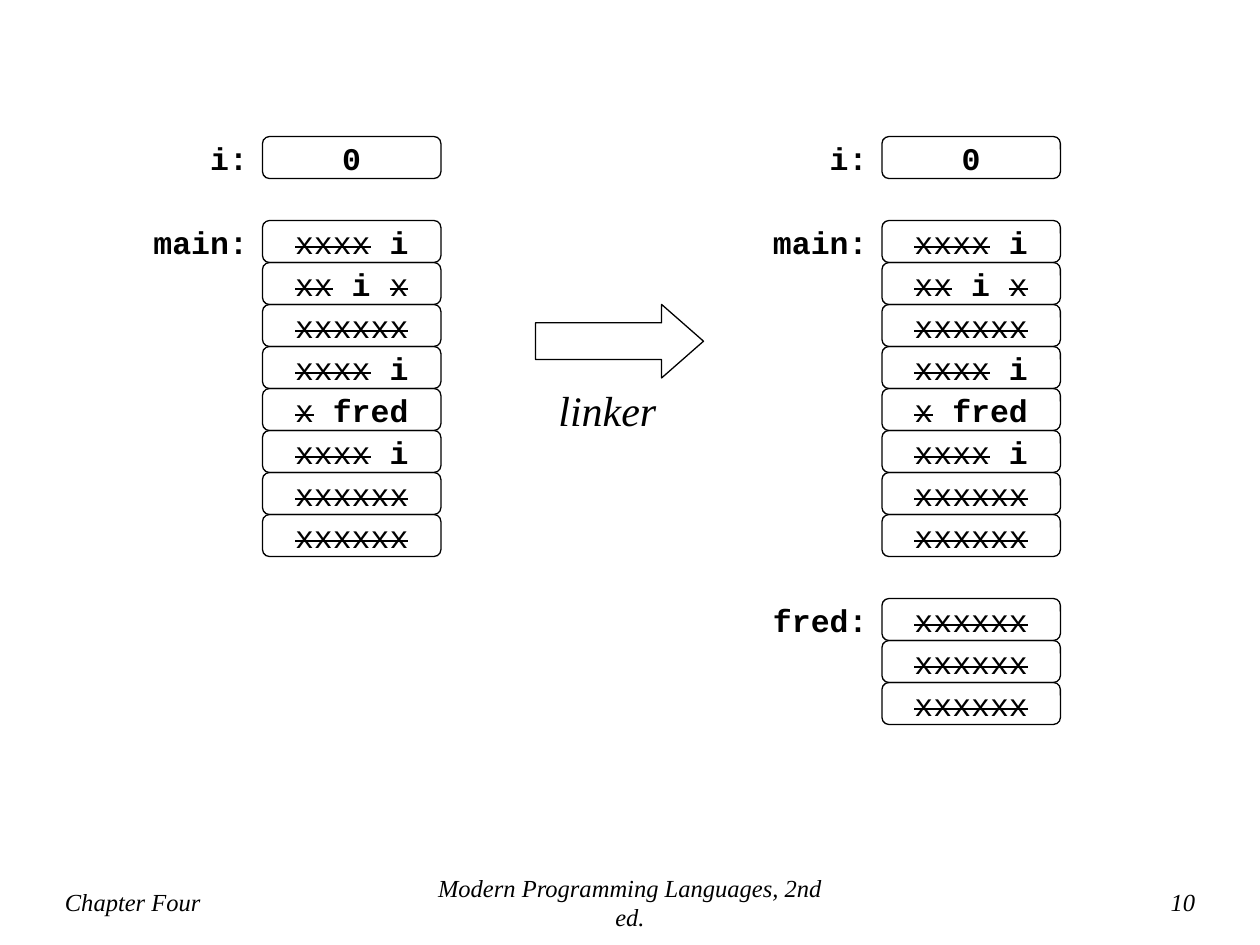
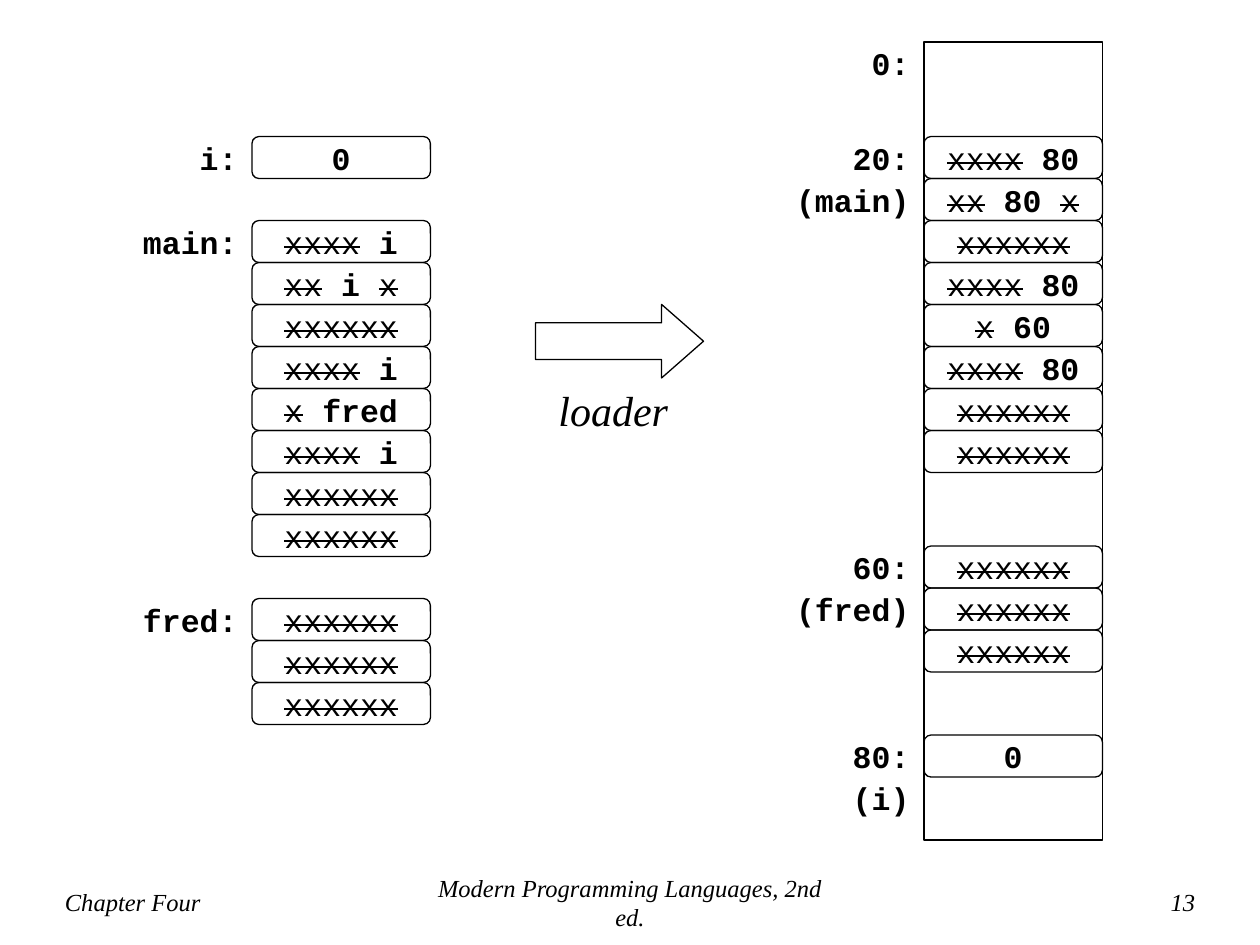
from dataclasses import dataclass
from itertools import groupby

from pptx import Presentation
from pptx.dml.color import RGBColor as Rgb
from pptx.enum.shapes import MSO_SHAPE as Kind
from pptx.enum.text import MSO_ANCHOR as Anchor, PP_ALIGN as Align
from pptx.util import Pt


@dataclass(frozen=True)
class Theme:
    ink: Rgb = Rgb(0, 0, 0)
    serif: str = "Times New Roman"
    mono: str = "Courier New"
    foot: int = 14
    code: int = 18
    step: int = 24
    line: float = 0.75


theme = Theme()
ROW, WIDE = 24, 102


def write(shape, text, *, font=theme.serif, size=theme.foot, bold=False,
          italic=False, align=Align.LEFT, anchor=Anchor.MIDDLE, wrap=True,
          strike=""):
    """Fill the shape with text; characters in strike are plain and struck out."""
    frame = shape.text_frame
    frame.word_wrap = wrap
    frame.vertical_anchor = anchor
    para = frame.paragraphs[0]
    para.alignment = align
    for struck, chars in groupby(text, lambda char: char in strike):
        run = para.add_run()
        run.text = "".join(chars)
        run.font.name = font
        run.font.size = Pt(size)
        run.font.bold = bold and not struck
        run.font.italic = italic
        run.font.color.rgb = theme.ink
        if struck:
            run._r.get_or_add_rPr().set("strike", "sngStrike")


def draw(shapes, kind, left, top, width=WIDE, height=ROW, line=True):
    shape = shapes.add_shape(kind, Pt(left), Pt(top), Pt(width), Pt(height))
    shape.shadow.inherit = False
    shape.fill.background()
    if line:
        shape.line.color.rgb = theme.ink
        shape.line.width = Pt(theme.line)
    else:
        shape.line.fill.background()
    return shape


# Each block is (labels, top, rows); a main block has two address forms.
BLANK = "xxxxxx"
named, placed = (
    [f"xxxx {var}", f"xx {var} x", BLANK, f"xxxx {var}", f"x {func}",
     f"xxxx {var}", BLANK, BLANK]
    for var, func in (("i", "fred"), ("80", "60"))
)
fred = [BLANK] * 3
object_code = [(["i:"], 78, ["0"]), (["main:"], 126, named)]
linked = object_code + [(["fred:"], 342, fred)]
loaded = [
    (["0:"], 24, []),
    (["20:", "(main)"], 78, placed),
    (["60:", "(fred)"], 312, fred),
    (["80:", "(i)"], 420, ["0"]),
]

# Page number, tool, then (left, blocks, has memory frame) for each side.
pages = [
    ("10", "linker", [(150, object_code, False), (504, linked, False)]),
    ("13", "loader", [(144, linked, False), (528, loaded, True)]),
]

deck = Presentation()
deck.slide_width, deck.slide_height = Pt(720), Pt(540)

for number, tool, sides in pages:
    shapes = deck.slides.add_slide(deck.slide_layouts[6]).shapes

    for text, left, width, align in (
        ("Chapter Four", 30, 162, Align.LEFT),
        ("Modern Programming Languages, 2nd ed.", 240, 240, Align.CENTER),
        (number, 540, 150, Align.RIGHT),
    ):
        foot = shapes.add_textbox(Pt(left), Pt(497.5), Pt(width), Pt(36))
        write(foot, text, italic=True, align=align, wrap=align != Align.CENTER)

    name = shapes.add_textbox(Pt(312), Pt(216), Pt(78), Pt(36))
    write(name, tool, size=theme.step, italic=True, anchor=Anchor.TOP)

    arrow = draw(shapes, Kind.RIGHT_ARROW, 306, 174, 96, 42)
    arrow.adjustments[1] = 0.57

    for left, blocks, framed in sides:
        group = shapes.add_group_shape().shapes
        for labels, top, rows in blocks:
            for k, text in enumerate(rows):
                cell = draw(group, Kind.ROUNDED_RECTANGLE, left, top + k * ROW)
                write(cell, text, font=theme.mono, size=theme.code, bold=True,
                      align=Align.CENTER, strike="x")
            for k, text in enumerate(labels):
                label = draw(group, Kind.ROUNDED_RECTANGLE, left - WIDE,
                             top + k * ROW, line=False)
                write(label, text, font=theme.mono, size=theme.code, bold=True,
                      align=Align.RIGHT)
        if framed:
            draw(group, Kind.RECTANGLE, left, 24, height=456)

deck.save("out.pptx")
